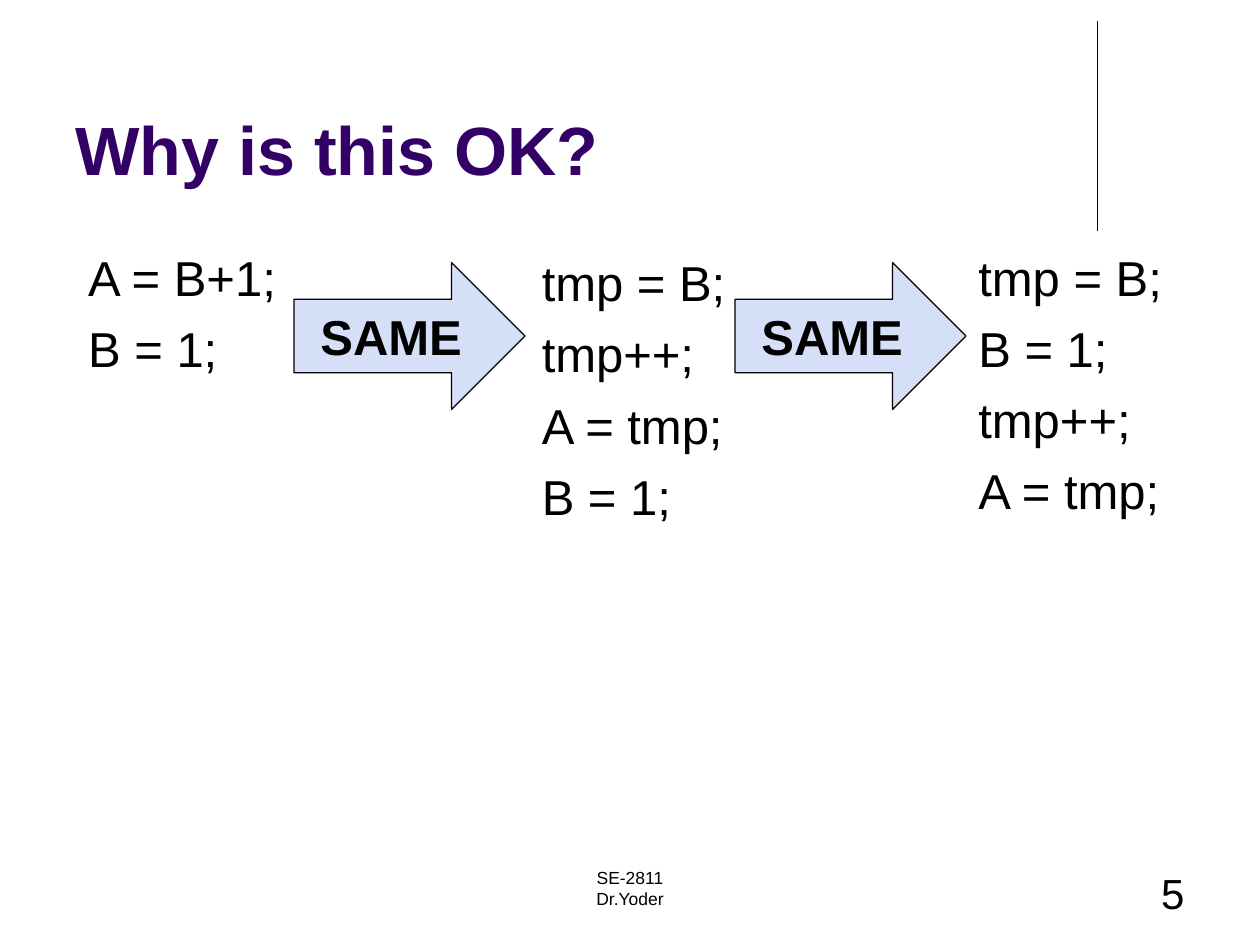
from lxml import etree
from pptx import Presentation
from pptx.dml.color import RGBColor
from pptx.enum.shapes import MSO_CONNECTOR, MSO_SHAPE
from pptx.enum.text import MSO_ANCHOR, MSO_AUTO_SIZE, PP_ALIGN
from pptx.oxml.ns import qn
from pptx.util import Inches, Pt

BLACK = RGBColor(0x00, 0x00, 0x00)
PURPLE = RGBColor(0x33, 0x00, 0x66)
PALE = RGBColor(0xD5, 0xDF, 0xF7)
LEFT, MID, RIGHT = PP_ALIGN.LEFT, PP_ALIGN.CENTER, PP_ALIGN.RIGHT
ARROW, LINE = MSO_SHAPE.RIGHT_ARROW, MSO_CONNECTOR.STRAIGHT
BOTTOM, FIXED = MSO_ANCHOR.BOTTOM, MSO_AUTO_SIZE.NONE

deck = Presentation()
deck.slide_width, deck.slide_height = Inches(10), Inches(7.5)
COL, ROW = deck.slide_width / 120, deck.slide_height / 90
slide = deck.slides.add_slide(deck.slide_layouts[3])
shapes = slide.shapes


def place(shape, x, y, w, h):
    shape.left, shape.top = round(x * COL), round(y * ROW)
    shape.width, shape.height = round(w * COL), round(h * ROW)


def write(shape, lines, size, align=LEFT, color=BLACK, bold=False, gap=0, wrap=True):
    frame = shape.text_frame
    frame.text = "\n".join(lines)
    frame.auto_size, frame.word_wrap = FIXED, wrap
    style = {"name": "Arial", "size": Pt(size), "bold": bold}
    for i, para in enumerate(frame.paragraphs):
        para.alignment = align
        para.space_before = Pt(gap if i else 0)
        props = para._p.get_or_add_pPr()
        props.set("marL", "0")
        props.set("indent", "0")
        etree.SubElement(props, qn("a:buNone"))
        for key, value in style.items():
            setattr(para.runs[0].font, key, value)
        para.runs[0].font.color.rgb = color


# Rule at the top right
rule = shapes.add_connector(LINE, *(round(v) for v in (
    104.5 * COL, 2 * ROW, 104.5 * COL, 22 * ROW)))
rule.line.color.rgb, rule.line.width = BLACK, Pt(0.75)
etree.SubElement(rule._element.spPr, qn("a:effectLst"))

# Title
title = shapes.title
place(title, 6, 1.6, 99, 17)
write(title, ["Why is this OK?"], 39, color=PURPLE, bold=True)
title.text_frame.vertical_anchor = BOTTOM

# Three versions of the code
first, second = slide.placeholders[1], slide.placeholders[2]
third = shapes.add_textbox(0, 0, 0, 0)
steps = [
    (first, 6, 22.5, 22, 0.2, ["A = B+1;", "B = 1;"]),
    (second, 50.4, 23, 29.6, 0.1, ["tmp = B;", "tmp++;", "A = tmp;", "B = 1;"]),
    (third, 92, 22.5, 28, 0.1, ["tmp = B;", "B = 1;", "tmp++;", "A = tmp;"]),
]
for box, x, y, w, inset, lines in steps:
    place(box, x, y, w, 57.8)
    write(box, lines, 28, gap=7)
    box.text_frame.margin_left = Inches(inset)
    box.text_frame.margin_right = Inches(0.05)
    box.text_frame.margin_top = Inches(0.09)

# Arrows between the versions
for x in (28, 70):
    arrow = shapes.add_shape(ARROW, 0, 0, 0, 0)
    place(arrow, x, 25, 22, 14)
    arrow.shadow.inherit = False
    arrow.fill.solid()
    arrow.fill.fore_color.rgb = PALE
    arrow.line.color.rgb, arrow.line.width = BLACK, Pt(0.75)
    write(arrow, ["SAME"], 28, MID, bold=True, wrap=False)

# Footer and slide number
for x, w, lines, size, align in (
    (41, 38, ["SE-2811", "Dr.Yoder"], 10, MID),
    (86, 28, ["5"], 24, RIGHT),
):
    box = shapes.add_textbox(0, 0, 0, 0)
    place(box, x, 82, w, 6)
    write(box, lines, size, align)

deck.save("out.pptx")
